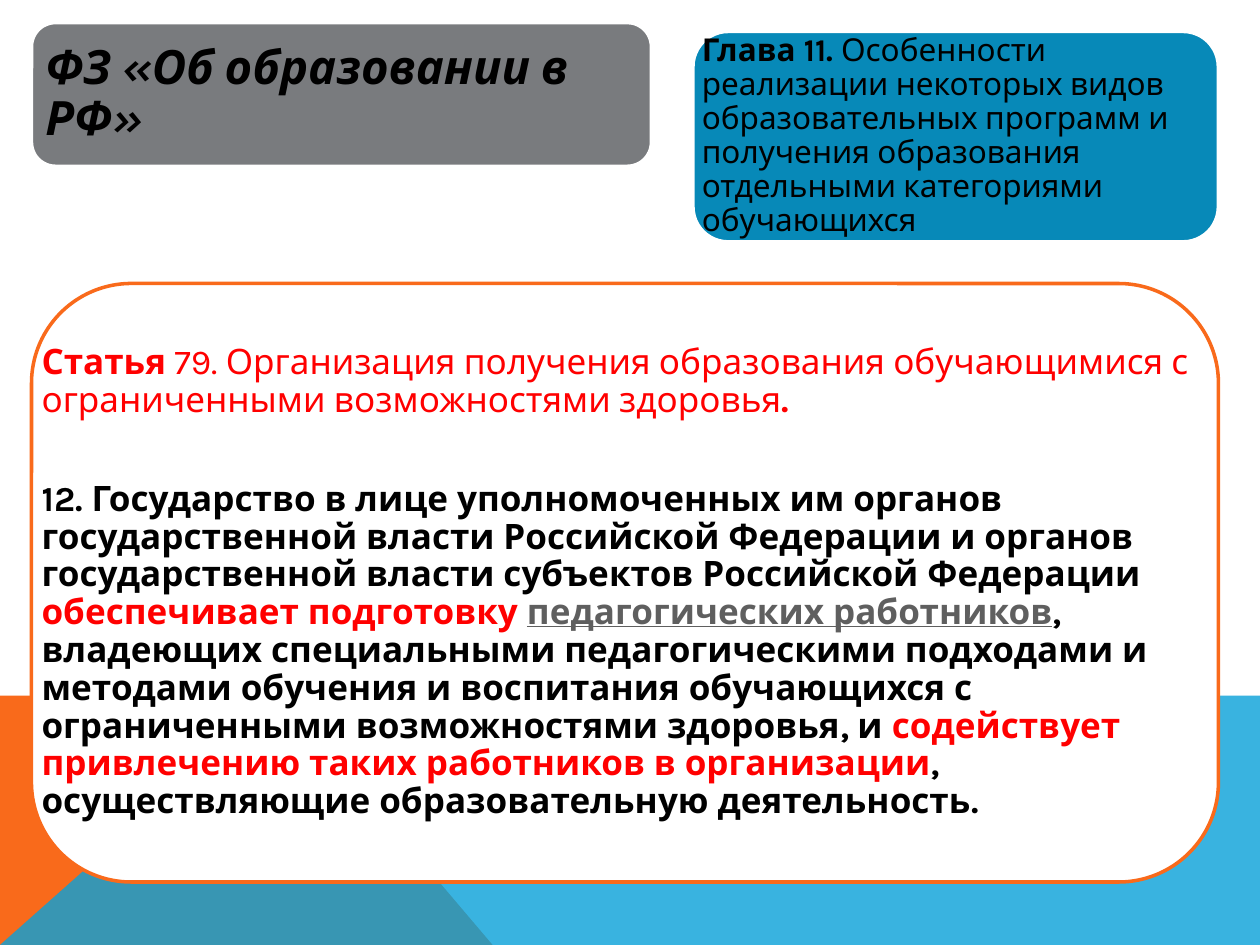
import pptx
import pptx.dml.color
import pptx.enum.shapes
import pptx.enum.text
import pptx.oxml
import pptx.oxml.ns
import pptx.util
from pptx.util import Inches

BLACK, WHITE, RED, ORANGE = "000000", "FFFFFF", "FF0000", "F96A1B"
GREY, TEAL, SKY, LINK = "797B7E", "0789B8", "08A1D9", "5F5F5F"

CHAPTER = [
    ("Глава 11. ", {"bold": True}),
    ("Особенности реализации некоторых видов образовательных программ и получения "
     "образования отдельными категориями обучающихся", {}),
]
ARTICLE_HEADING = [
    ("Статья", {"bold": True, "color": RED}),
    (" 79. Организация получения образования обучающимися с ограниченными "
     "возможностями здоровья", {"color": RED}),
    (".", {"bold": True, "color": RED}),
]
ARTICLE_CLAUSE = [
    ("12. Государство в лице уполномоченных им органов государственной власти "
     "Российской Федерации и органов государственной власти субъектов Российской "
     "Федерации ", {"bold": True}),
    ("обеспечивает подготовку ", {"bold": True, "color": RED}),
    ("педагогических работников", {"bold": True, "underline": True, "color": LINK}),
    (", владеющих специальными педагогическими подходами и методами обучения и "
     "воспитания обучающихся с ограниченными возможностями здоровья, и ", {"bold": True}),
    ("содействует привлечению таких работников в организации",
     {"bold": True, "color": RED}),
    (", осуществляющие образовательную деятельность.", {"bold": True}),
]


def rgb(value):
    return pptx.dml.color.RGBColor.from_string(value)


def paint(shape, fill, line=None):
    shape.shadow.inherit = False
    shape.fill.solid()
    shape.fill.fore_color.rgb = rgb(fill)
    if line:
        shape.line.color.rgb = rgb(line)
        shape.line.width = pptx.util.Pt(2)
    else:
        shape.line.fill.background()


def add_polygon(page, points, fill, opacity=100):
    corners = [(Inches(x), Inches(y)) for x, y in points]
    builder = page.shapes.build_freeform(*corners[0])
    builder.add_line_segments(corners[1:], close=True)
    shape = builder.convert_to_shape()
    paint(shape, fill)
    if opacity < 100:
        color = shape.element.find(".//" + pptx.oxml.ns.qn("a:srgbClr"))
        alpha = pptx.oxml.parse_xml(
            f'<a:alpha {pptx.oxml.ns.nsdecls("a")} val="{opacity * 1000}"/>')
        color.append(alpha)


def add_card(page, box, fill, line):
    card = page.shapes.add_shape(
        pptx.enum.shapes.MSO_SHAPE.ROUNDED_RECTANGLE, *map(Inches, box))
    paint(card, fill, line)


def write_text(holder, paragraphs, size, inset, gap=0):
    """Fill a text holder with paragraphs of (text, format) spans."""
    frame = holder.text_frame
    settings = {
        "word_wrap": True,
        "auto_size": pptx.enum.text.MSO_AUTO_SIZE.NONE,
        "vertical_anchor": pptx.enum.text.MSO_ANCHOR.MIDDLE,
    }
    for side in ("left", "top", "right", "bottom"):
        settings["margin_" + side] = Inches(inset)
    for name, value in settings.items():
        setattr(frame, name, value)

    for index, spans in enumerate(paragraphs):
        para = frame.add_paragraph() if index else frame.paragraphs[0]
        para.alignment = pptx.enum.text.PP_ALIGN.LEFT
        para.line_spacing = 0.9
        para.space_before = pptx.util.Pt(gap if index else 0)
        for text, look in spans:
            span = para.add_run()
            span.text = text
            values = {"name": "Karla", "size": pptx.util.Pt(size), "bold": False} | look
            span.font.color.rgb = rgb(values.pop("color", BLACK))
            for name, value in values.items():
                setattr(span.font, name, value)


def add_backdrop(page, box):
    """Orange wedge and translucent blue band along the bottom."""
    left, top, width, height = box
    right, bottom = left + width, top + height
    bend = left + 2.23
    add_polygon(page, [(left, bottom), (left, top), (bend, top), (3.91, bottom)], ORANGE)
    add_polygon(page, [(left, bottom), (bend, top), (right, top), (right, bottom)],
                SKY, opacity=80)


def add_title_card(page, box):
    add_card(page, box, GREY, WHITE)
    title = page.shapes.title
    for name, value in zip(("left", "top", "width", "height"), box):
        setattr(title, name, Inches(value))
    # Bring the title in front of its card
    title.element.getparent().append(title.element)
    look = {"bold": True, "italic": True}
    write_text(title, [[("ФЗ «Об образовании в РФ»", look)]], 27, 0.11)


def add_text_card(page, box, fill, line, paragraphs, size, inset, gap=0):
    add_card(page, box, fill, line)
    holder = page.shapes.add_textbox(*map(Inches, box))
    write_text(holder, paragraphs, size, inset, gap)


def main():
    deck = pptx.Presentation()
    deck.slide_width, deck.slide_height = Inches(10), Inches(7.5)
    page = deck.slides.add_slide(deck.slide_layouts.get_by_name("Title Only"))

    # Backdrop
    add_backdrop(page, (0, 5.52, 10, 1.98))
    # Law title
    add_title_card(page, (0.25, 0.18, 4.92, 1.14))
    # Chapter
    add_text_card(page, (5.5, 0.25, 4.17, 1.67), TEAL, WHITE, [CHAPTER], 18, 0.07)
    # Article
    add_text_card(page, (0.25, 2.25, 9.42, 4.75), WHITE, ORANGE,
                  [ARTICLE_HEADING, ARTICLE_CLAUSE], 20, 0.08, gap=35)

    deck.save("out.pptx")


if __name__ == "__main__":
    main()
